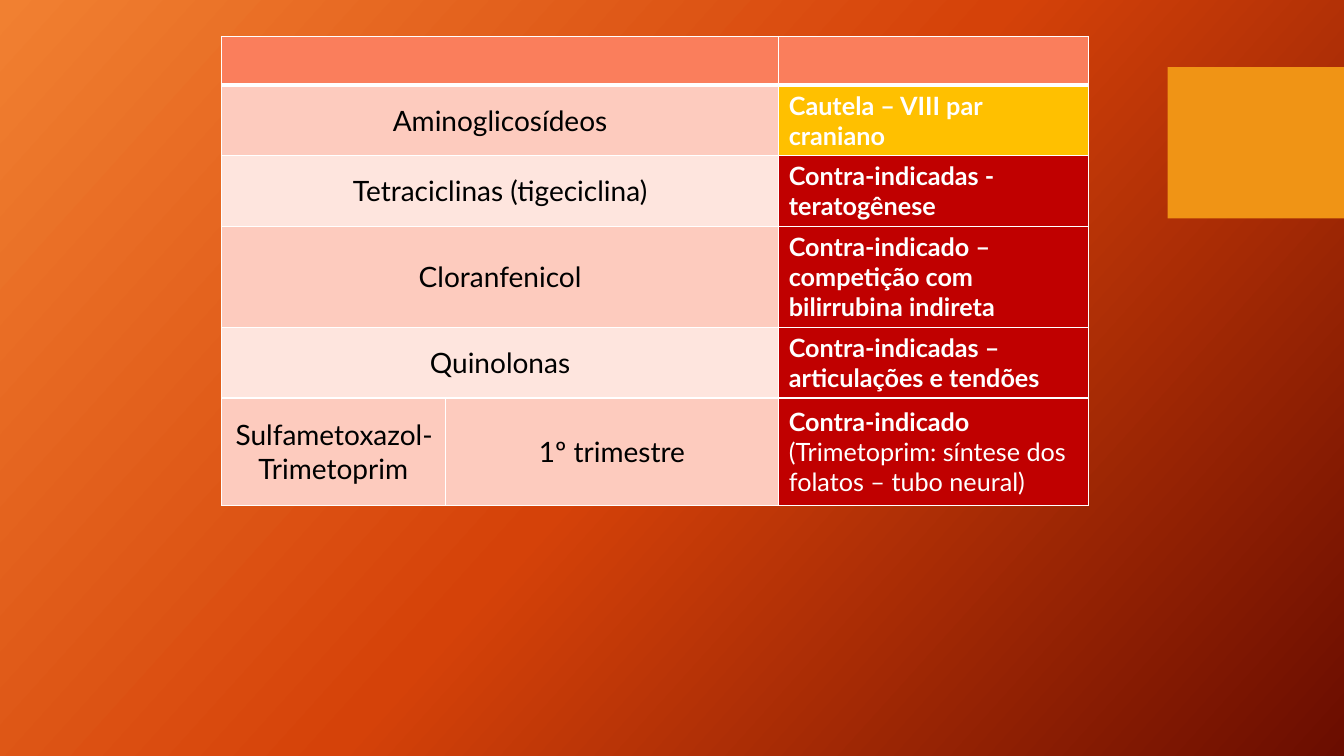
from copy import deepcopy
from dataclasses import dataclass

from lxml.etree import SubElement
from pptx import Presentation
from pptx.dml.color import RGBColor
from pptx.enum.shapes import MSO_SHAPE
from pptx.enum.text import MSO_ANCHOR, PP_ALIGN
from pptx.oxml.ns import qn
from pptx.util import Pt


@dataclass(frozen=True)
class Theme:
    font: str = "Lato"
    drug_size: int = 20
    advice_size: int = 18
    gradient: tuple = ((0, "F18031"), (0.5, "D54209"), (1, "6A0D00"))
    gradient_angle: int = 42
    accent: str = "F09415"
    header: str = "FA7E5C"
    bands: tuple = ("FDCBBE", "FEE5DE")
    caution: str = "FFC000"
    forbidden: str = "C00000"
    dark: str = "000000"
    light: str = "FFFFFF"


THEME = Theme()
COLUMNS = (159.8, 238.3, 221)
HEADER_HEIGHT = 34.8

# Row height, drug cells, advice paragraphs, advice colour
DRUGS = (
    (50.2, ("Aminoglicosídeos",), ("Cautela – VIII par craniano",), THEME.caution),
    (50.2, ("Tetraciclinas (tigeciclina)",),
     ("Contra-indicadas - teratogênese",), THEME.forbidden),
    (72.2, ("Cloranfenicol",),
     ("Contra-indicado – competição com bilirrubina indireta",), THEME.forbidden),
    (50.2, ("Quinolonas",),
     ("Contra-indicadas – articulações e tendões",), THEME.forbidden),
    (77, ("Sulfametoxazol-Trimetoprim", "1º trimestre"),
     ("Contra-indicado", "(Trimetoprim: síntese dos folatos – tubo neural)"),
     THEME.forbidden),
)


def rgb(value):
    return RGBColor.from_string(value)


def set_background(slide):
    fill = slide.background.fill
    fill.gradient()
    fill.gradient_angle = 360 - THEME.gradient_angle
    # The default gradient has two stops; add the middle one
    first = slide.background._cSld.find(".//" + qn("a:gs"))
    first.addnext(deepcopy(first))
    for stop, (position, color) in zip(fill.gradient_stops, THEME.gradient):
        stop.position = position
        stop.color.rgb = rgb(color)


def add_accent(slide, left, top, width, height):
    sp = slide.shapes.add_shape(MSO_SHAPE.RECTANGLE, Pt(left), Pt(top),
                                Pt(width), Pt(height))
    sp.shadow.inherit = False
    sp.fill.solid()
    sp.fill.fore_color.rgb = rgb(THEME.accent)
    sp.line.fill.background()


def style_cell(cell, fill, bottom=1):
    # Borders come before the fill in the cell properties
    tcPr = cell._tc.get_or_add_tcPr()
    for side, weight in (("L", 1), ("R", 1), ("T", 1), ("B", bottom)):
        ln = SubElement(tcPr, qn("a:ln" + side), w=str(Pt(weight)))
        SubElement(SubElement(ln, qn("a:solidFill")), qn("a:srgbClr"),
                   val=THEME.light)
    cell.fill.solid()
    cell.fill.fore_color.rgb = rgb(fill)


def write_cell(cell, paragraphs, size, color, align, bold_first=False):
    cell.vertical_anchor = MSO_ANCHOR.MIDDLE
    tf = cell.text_frame
    tf.text = "\n".join(paragraphs)
    for i, p in enumerate(tf.paragraphs):
        p.alignment = align
        font = p.runs[0].font
        font.name = THEME.font
        font.size = Pt(size)
        font.color.rgb = rgb(color)
        font.bold = bold_first and i == 0


def add_drug_table(slide, left, top):
    heights = (HEADER_HEIGHT, *(row[0] for row in DRUGS))
    table = slide.shapes.add_table(
        len(heights), len(COLUMNS), Pt(left), Pt(top),
        Pt(sum(COLUMNS)), Pt(sum(heights))).table
    table.first_row = table.horz_banding = False
    for column, width in zip(table.columns, COLUMNS):
        column.width = Pt(width)
    for row, height in zip(table.rows, heights):
        row.height = Pt(height)

    # Header
    for cell in table.rows[0].cells:
        style_cell(cell, THEME.header, bottom=3)
    table.cell(0, 0).merge(table.cell(0, 1))

    # Drugs and advice
    for r, (_, drugs, advice, color) in enumerate(DRUGS, 1):
        band = THEME.bands[(r - 1) % 2]
        for c, fill in enumerate((band, band, color)):
            style_cell(table.cell(r, c), fill)
        if len(drugs) == 1:
            table.cell(r, 0).merge(table.cell(r, 1))
        for c, drug in enumerate(drugs):
            write_cell(table.cell(r, c), (drug,), THEME.drug_size, THEME.dark,
                       PP_ALIGN.CENTER)
        write_cell(table.cell(r, 2), advice, THEME.advice_size, THEME.light,
                   PP_ALIGN.LEFT, bold_first=True)


def main():
    prs = Presentation()
    prs.slide_width, prs.slide_height = Pt(960), Pt(540)
    slide = prs.slides.add_slide(prs.slide_layouts[6])
    set_background(slide)
    add_accent(slide, 834, 48, 126, 108)
    add_drug_table(slide, 158.2, 26)
    prs.save("out.pptx")


if __name__ == "__main__":
    main()
